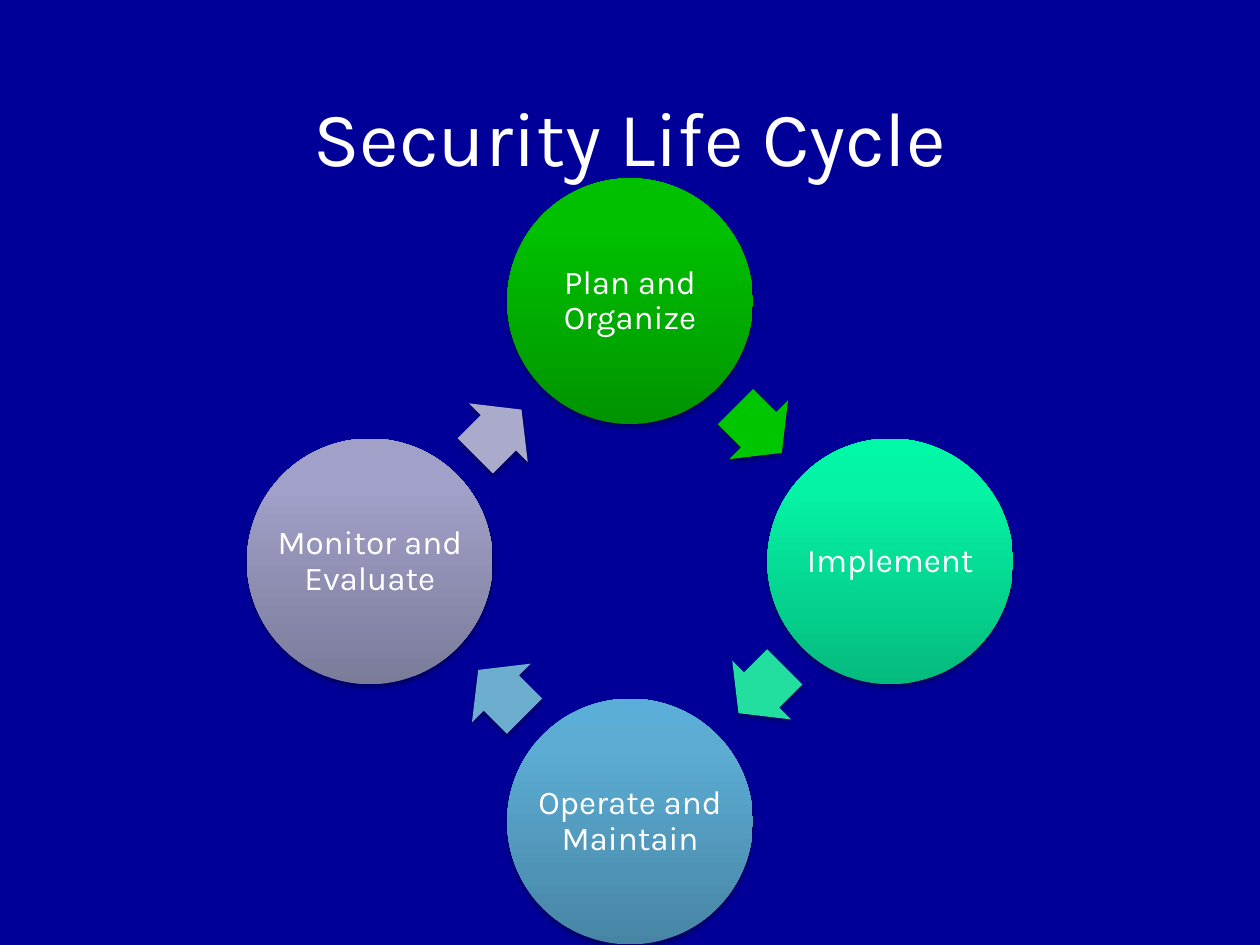
"""Build the Security Life Cycle slide: four stages on a ring, joined by arrows."""
import copy
import dataclasses
import math
import typing

import lxml.etree
import pptx
import pptx.dml.color
import pptx.enum.shapes
import pptx.enum.text
import pptx.oxml.ns
import pptx.util

Pt = pptx.util.Pt
Shapes = pptx.enum.shapes.MSO_SHAPE
qualified = pptx.oxml.ns.qn


@dataclasses.dataclass(frozen=True)
class Theme:
    background: str = "000099"
    text: str = "FFFFFF"
    shadow: str = "000000"
    font: str = "Karla"
    title_size: float = 44
    label_size: float = 19


@dataclasses.dataclass(frozen=True)
class Stage:
    label: str
    gradient: tuple[str, str, str]
    arrow: str


@dataclasses.dataclass(frozen=True)
class Ring:
    x: float = 360
    y: float = 320.8
    radius: float = 148.7
    diameter: float = 140.4
    arrow_width: float = 37.4
    arrow_height: float = 47.5
    arrow_setback: float = 1.2


THEME = Theme()
RING = Ring()
GRADIENT_POSITIONS = (0, 0.8, 1)
STAGES = (
    Stage("Plan and Organize", ("009400", "00C000", "00C100"), "00C600"),
    Stage("Implement", ("04BB7E", "05F3A4", "00F9A6"), "22DE9F"),
    Stage("Operate and Maintain", ("4785A4", "5CACD4", "5AAED8"), "6DADCD"),
    Stage("Monitor and Evaluate", ("7B7B9A", "A0A0C8", "A0A0CA"), "AAAACA"),
)


def colour(code: str) -> pptx.dml.color.RGBColor:
    """Turn a hex code into a colour."""
    return pptx.dml.color.RGBColor.from_string(code)


def apply_format(target: typing.Any, values: dict[str, typing.Any]) -> None:
    """Set each named attribute on the target."""
    for name, value in values.items():
        setattr(target, name, value)


def centred(x: float, y: float, width: float, height: float) -> tuple:
    """Give left, top, width and height of a box around a centre."""
    return Pt(x - width / 2), Pt(y - height / 2), Pt(width), Pt(height)


def write_text(box: typing.Any, text: str, size: float, spacing: float, margin: float) -> None:
    """Write one centred paragraph in a box."""
    frame = box.text_frame
    frame.text = text
    apply_format(frame, {
        "word_wrap": True,
        "vertical_anchor": pptx.enum.text.MSO_ANCHOR.MIDDLE,
        "margin_left": Pt(margin),
        "margin_right": Pt(margin),
        "margin_top": Pt(margin),
        "margin_bottom": Pt(margin),
    })
    para = frame.paragraphs[0]
    apply_format(para, {"alignment": pptx.enum.text.PP_ALIGN.CENTER, "line_spacing": spacing})
    span = para.runs[0]
    apply_format(span.font, {"name": THEME.font, "size": Pt(size)})
    span.font.color.rgb = colour(THEME.text)


def add_shadow(shape: typing.Any) -> None:
    """Give a shape a soft shadow falling straight down."""
    shape.shadow.inherit = False
    effects = shape._element.spPr.find(qualified("a:effectLst"))
    outer = lxml.etree.SubElement(
        effects, qualified("a:outerShdw"), blurRad=str(Pt(3.1)), dist=str(Pt(1.8)),
        dir="5400000", rotWithShape="0")
    tint = lxml.etree.SubElement(outer, qualified("a:srgbClr"), val=THEME.shadow)
    lxml.etree.SubElement(tint, qualified("a:alpha"), val="35000")


def fill_gradient(shape: typing.Any, codes: tuple[str, str, str]) -> None:
    """Fill a shape with three stops rising from bottom to top."""
    shape.fill.gradient()
    shape.fill.gradient_angle = 90
    stop_list = shape._element.spPr.find(".//" + qualified("a:gsLst"))
    stop_list.append(copy.deepcopy(stop_list[-1]))
    for stop, position, code in zip(shape.fill.gradient_stops, GRADIENT_POSITIONS, codes):
        stop.position = position
        stop.color.rgb = colour(code)


def add_stage(group: typing.Any, stage: Stage, angle: float) -> None:
    """Draw one labelled circle at an angle on the ring."""
    x = RING.x + RING.radius * math.cos(angle)
    y = RING.y + RING.radius * math.sin(angle)
    place = centred(x, y, RING.diameter, RING.diameter)
    circle = group.shapes.add_shape(Shapes.OVAL, *place)
    fill_gradient(circle, stage.gradient)
    circle.line.fill.background()
    add_shadow(circle)
    label = group.shapes.add_textbox(*place)
    write_text(label, stage.label, THEME.label_size, spacing=0.9, margin=2)


def add_arrow(group: typing.Any, stage: Stage, angle: float) -> None:
    """Draw the arrow leaving a stage, halfway to the next one."""
    middle = angle + math.pi / 4
    heading = middle + math.pi / 2
    reach = RING.radius * math.cos(math.pi / 4)
    x = RING.x + reach * math.cos(middle) - RING.arrow_setback * math.cos(heading)
    y = RING.y + reach * math.sin(middle) - RING.arrow_setback * math.sin(heading)
    arrow = group.shapes.add_shape(
        Shapes.RIGHT_ARROW, *centred(x, y, RING.arrow_width, RING.arrow_height))
    arrow.adjustments[0] = 0.6
    arrow.adjustments[1] = 0.5
    arrow.rotation = round(math.degrees(heading))
    arrow.fill.solid()
    arrow.fill.fore_color.rgb = colour(stage.arrow)
    arrow.line.fill.background()
    add_shadow(arrow)


def main() -> None:
    """Build and save the deck."""
    deck = pptx.Presentation()
    apply_format(deck, {"slide_width": Pt(720), "slide_height": Pt(540)})
    page = deck.slides.add_slide(deck.slide_layouts[5])
    page.background.fill.solid()
    page.background.fill.fore_color.rgb = colour(THEME.background)

    title = page.shapes.title
    apply_format(title, {"left": Pt(36), "top": Pt(23), "width": Pt(648), "height": Pt(108.7)})
    write_text(title, "Security Life Cycle", THEME.title_size, spacing=1.0, margin=3.6)

    cycle = page.shapes.add_group_shape()
    for index, stage in enumerate(STAGES):
        angle = (index - 1) * math.tau / len(STAGES)
        add_stage(cycle, stage, angle)
        add_arrow(cycle, stage, angle)

    deck.save("out.pptx")


if __name__ == "__main__":
    main()
